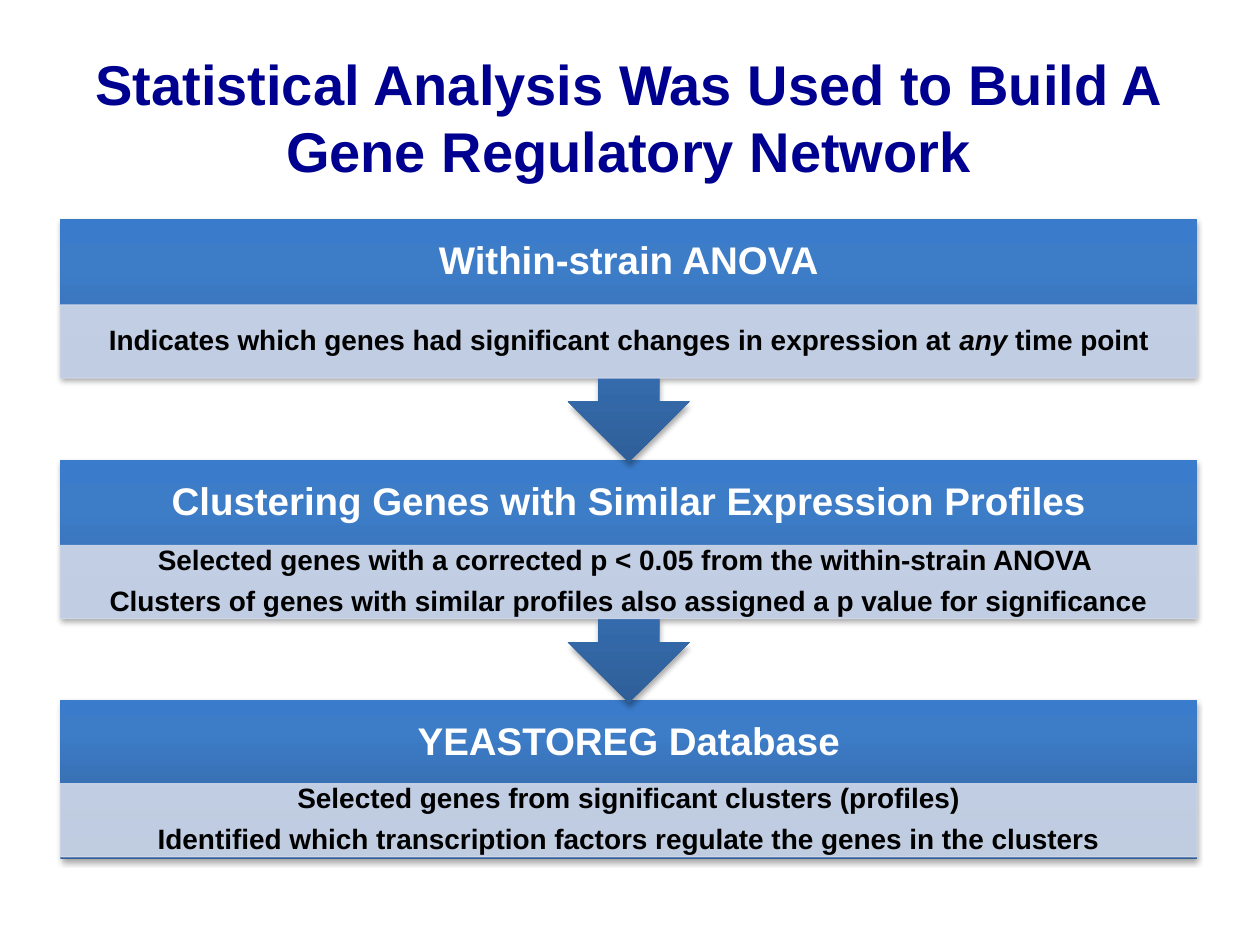
"""Build a slide with three analysis steps linked by downward callout arrows."""
from dataclasses import dataclass

from lxml import etree
from pptx import Presentation
from pptx.dml.color import RGBColor
from pptx.enum.shapes import MSO_SHAPE as Shape
from pptx.enum.text import MSO_ANCHOR as Anchor, PP_ALIGN as Align
from pptx.oxml import parse_xml
from pptx.oxml.ns import nsdecls, qn
from pptx.util import Inches, Pt


@dataclass(frozen=True)
class Theme:
    font: str = "Arial"
    title_color: str = "000090"
    header_color: str = "FFFFFF"
    detail_color: str = "000000"
    panel_color: str = "D0D8E8"
    panel_alpha: int = 90
    gradient: tuple = ((0, "2F5F99"), (80, "3D7CC7"), (100, "3A7CCB"))
    title_size: int = 32
    header_size: int = 22
    detail_size: int = 16


class FlowSlide:
    def __init__(self, slide, theme):
        self.slide = slide
        self.theme = theme

    def fill_text(self, shape, paragraphs, size, color, margins, **spacing):
        frame = shape.text_frame
        sides = ("margin_left", "margin_top", "margin_right", "margin_bottom")
        frame_format = {"word_wrap": True, "vertical_anchor": Anchor.MIDDLE}
        frame_format.update((side, Inches(gap)) for side, gap in zip(sides, margins))
        for name, value in frame_format.items():
            setattr(frame, name, value)
        for index, runs in enumerate(paragraphs):
            paragraph = frame.add_paragraph() if index else frame.paragraphs[0]
            for name, value in {"alignment": Align.CENTER, **spacing}.items():
                setattr(paragraph, name, value)
            for text, italic in runs:
                run = paragraph.add_run()
                run.text = text
                run.font.color.rgb = RGBColor.from_string(color)
                font_format = {"name": self.theme.font, "size": Pt(size),
                               "bold": True, "italic": italic}
                for name, value in font_format.items():
                    setattr(run.font, name, value)

    def text(self, box, words, size, color, margins, **spacing):
        shape = self.slide.shapes.add_textbox(*map(Inches, box))
        self.fill_text(shape, [[(words, False)]], size, color, margins, **spacing)

    def block(self, kind, box, rotation=0):
        shape = self.slide.shapes.add_shape(kind, *map(Inches, box))
        shape.rotation = rotation
        shape.line.fill.background()
        stops = "".join(
            f'<a:gs pos="{position * 1000}"><a:srgbClr val="{color}"/></a:gs>'
            for position, color in self.theme.gradient)
        gradient = parse_xml(
            f'<a:gradFill {nsdecls("a")} rotWithShape="0"><a:gsLst>{stops}</a:gsLst>'
            '<a:lin ang="16200000" scaled="0"/></a:gradFill>')
        shadow = parse_xml(
            f'<a:effectLst {nsdecls("a")}><a:outerShdw blurRad="{Pt(3.1)}" '
            f'dist="{Pt(1.8)}" dir="5400000" rotWithShape="0">'
            '<a:srgbClr val="000000"><a:alpha val="35000"/></a:srgbClr>'
            '</a:outerShdw></a:effectLst>')
        properties = shape.element.spPr
        properties.find(qn("a:prstGeom")).addnext(gradient)
        properties.find(qn("a:ln")).addnext(shadow)

    def panel(self, box, paragraphs):
        theme = self.theme
        shape = self.slide.shapes.add_shape(Shape.RECTANGLE, *map(Inches, box))
        shape.shadow.inherit = False
        shape.line.width = Pt(0.75)
        for fill in (shape.fill, shape.line.fill):
            fill.solid()
            fill.fore_color.rgb = RGBColor.from_string(theme.panel_color)
        for color in shape.element.spPr.iter(qn("a:srgbClr")):
            etree.SubElement(color, qn("a:alpha"), val=str(theme.panel_alpha * 1000))
        self.fill_text(shape, paragraphs, theme.detail_size, theme.detail_color,
                       (0.12, 0.02, 0.12, 0.02), line_spacing=0.9, space_after=Pt(6))

    def step(self, top, header, paragraphs, panel_top, last):
        theme = self.theme
        if last:
            self.block(Shape.RECTANGLE, (LEFT, top, WIDTH, 1.26))
        else:
            self.block(Shape.UP_ARROW_CALLOUT, (LEFT, top, WIDTH, 1.93), 180)
        self.text((LEFT, top, WIDTH, 0.68), header, theme.header_size,
                  theme.header_color, (0.17,) * 4, line_spacing=0.9)
        self.panel((LEFT, panel_top, WIDTH, 0.58), paragraphs)


LEFT, WIDTH = 0.48, 9.02
FIRST_TOP, PITCH = 1.74, 1.91
STEPS = (
    ("Within-strain ANOVA",
     [[("Indicates which genes had significant changes in expression at ", False),
       ("any", True), (" time point", False)]], 2.42),
    ("Clustering Genes with Similar Expression Profiles",
     [[("Selected genes with a corrected p < 0.05 from the within-strain ANOVA ", False)],
      [("Clusters of genes with similar profiles also assigned a p value for significance",
        False)]], 4.33),
    ("YEASTOREG Database",
     [[("Selected genes from significant clusters (profiles)", False)],
      [("Identified which transcription factors regulate the genes in the clusters",
        False)]], 6.22),
)


def main():
    presentation = Presentation()
    presentation.slide_width, presentation.slide_height = Inches(10), Inches(7.5)
    theme = Theme()
    flow = FlowSlide(presentation.slides.add_slide(presentation.slide_layouts[6]), theme)
    flow.text((LEFT, 0.3, WIDTH, 1.25),
              "Statistical Analysis Was Used to Build A Gene Regulatory Network",
              theme.title_size, theme.title_color, (0.1, 0.05, 0.1, 0.05))
    last = len(STEPS) - 1
    for index, (header, paragraphs, panel_top) in reversed(list(enumerate(STEPS))):
        flow.step(FIRST_TOP + index * PITCH, header, paragraphs, panel_top, index == last)
    presentation.save("out.pptx")


if __name__ == "__main__":
    main()
